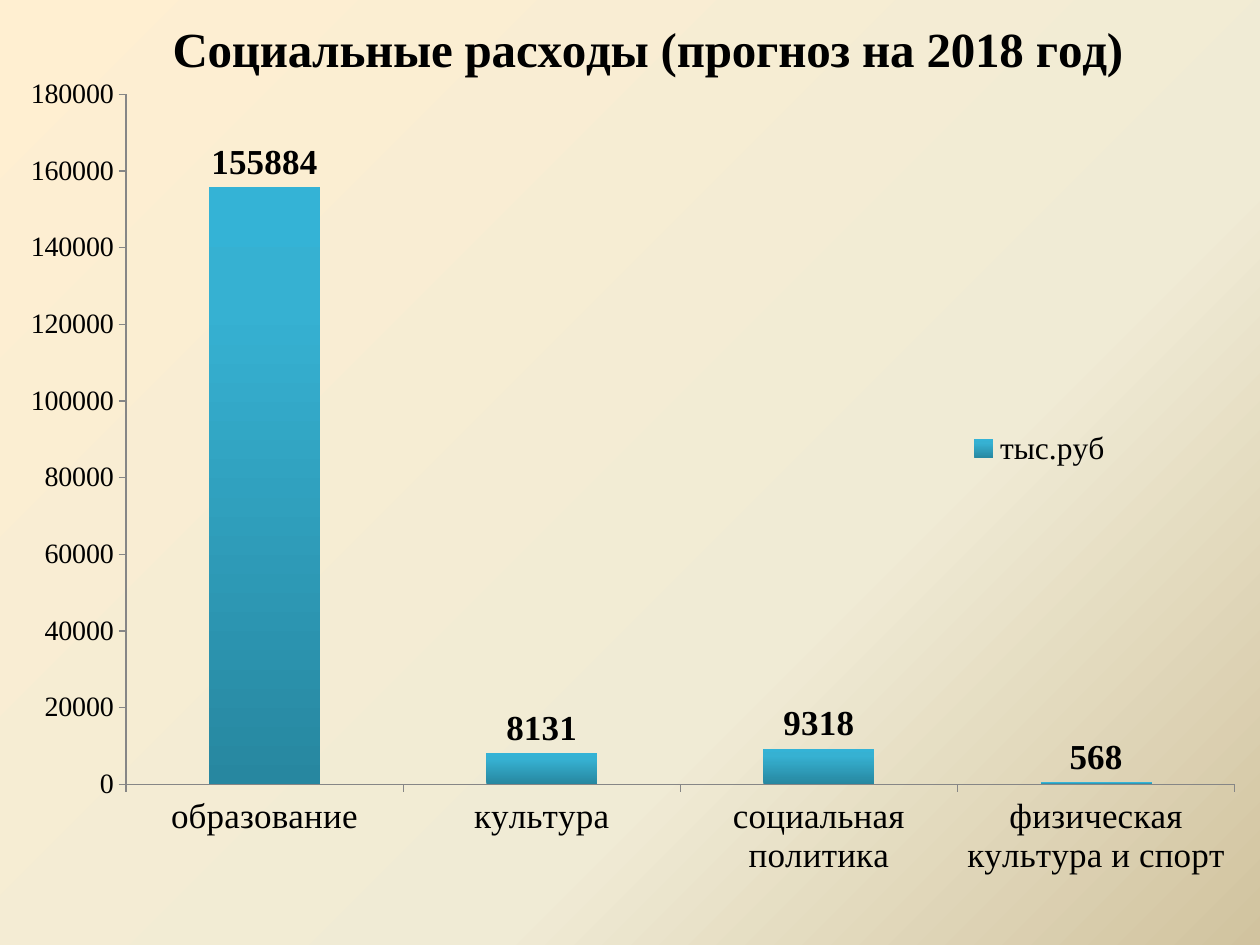
from dataclasses import dataclass

from lxml import etree
from pptx import Presentation
from pptx.chart.data import CategoryChartData
from pptx.dml.color import RGBColor
from pptx.enum.chart import (XL_CHART_TYPE, XL_LABEL_POSITION,
                             XL_LEGEND_POSITION, XL_TICK_MARK)
from pptx.oxml.ns import qn
from pptx.util import Pt

COLUMNS = XL_CHART_TYPE.COLUMN_CLUSTERED
LABEL_ABOVE = XL_LABEL_POSITION.OUTSIDE_END
LEGEND_RIGHT = XL_LEGEND_POSITION.RIGHT
TICK_OUTSIDE = XL_TICK_MARK.OUTSIDE

PAGE_WIDTH, PAGE_HEIGHT = Pt(720), Pt(540)
BLANK_LAYOUT = 6

TITLE = "Социальные расходы (прогноз на 2018 год)"
SERIES_NAME = "тыс.руб"
EXPENSES = {
    "образование": 155884,
    "культура": 8131,
    "социальная политика": 9318,
    "физическая культура и спорт": 568,
}


@dataclass(frozen=True)
class Theme:
    font: str = "Times New Roman"
    text: str = "000000"
    axis: str = "868686"
    # Gradient stops: position in percent, colour
    background: tuple = ((0, "FFEFD1"), (65, "F0EBD5"), (100, "D1C39F"))
    column: tuple = ((0, "2787A0"), (80, "36B1D2"), (100, "34B3D6"))
    title_size: int = 28
    label_size: int = 20
    legend_size: int = 18
    value_size: int = 16


THEME = Theme()


def style_font(font, size, bold=False):
    font.name = THEME.font
    font.size = Pt(size)
    font.bold = bold
    font.color.rgb = RGBColor.from_string(THEME.text)


def set_gradient(fill, owner, stops, angle):
    """Fill with any number of stops; the angle runs counter-clockwise."""
    fill.gradient()
    fill.gradient_angle = angle
    stop_list = next(owner.iter(qn("a:gsLst")))
    for stop in list(stop_list):
        stop_list.remove(stop)
    for position, color in stops:
        stop = etree.SubElement(stop_list, qn("a:gs"), pos=str(position * 1000))
        etree.SubElement(stop, qn("a:srgbClr"), val=color)


def place_part(part, index, **lengths):
    """Give a chart part a manual layout in fractions of the chart."""
    for old in part.findall(qn("c:layout")):
        part.remove(old)
    layout = etree.Element(qn("c:layout"))
    manual = etree.SubElement(layout, qn("c:manualLayout"))
    if part.tag == qn("c:plotArea"):
        etree.SubElement(manual, qn("c:layoutTarget"), val="inner")
    for mode in ("xMode", "yMode"):
        etree.SubElement(manual, qn(f"c:{mode}"), val="edge")
    for name, value in lengths.items():
        etree.SubElement(manual, qn(f"c:{name}"), val=str(value))
    part.insert(index, layout)


def style_axis(axis, size):
    axis.has_major_gridlines = False
    axis.major_tick_mark = TICK_OUTSIDE
    axis.format.line.color.rgb = RGBColor.from_string(THEME.axis)
    axis.format.line.width = Pt(0.75)
    style_font(axis.tick_labels.font, size)


def add_expense_chart(page):
    data = CategoryChartData(number_format="General")
    data.categories = list(EXPENSES)
    data.add_series(SERIES_NAME, list(EXPENSES.values()))
    chart = page.shapes.add_chart(
        COLUMNS, 0, 0, PAGE_WIDTH, PAGE_HEIGHT, data).chart
    chart.font.name = "Calibri"
    chart.font.size = Pt(10)
    return chart


def style_columns(plot):
    plot.gap_width = 150
    plot.vary_by_categories = False
    series = plot.series[0]
    set_gradient(series.format.fill, series.format.element
                 if hasattr(series.format, "element") else series._element,
                 THEME.column, 90)
    labels = series.data_labels
    labels.show_value = True
    labels.position = LABEL_ABOVE
    style_font(labels.font, THEME.label_size, bold=True)


def style_title(chart):
    chart.has_title = True
    frame = chart.chart_title.text_frame
    frame.text = TITLE
    style_font(frame.paragraphs[0].runs[0].font, THEME.title_size, bold=True)
    chart.chart_title.include_in_layout = False
    place_part(chart.chart_title._element, 1, x=0.13, y=0.01)


def style_legend(chart):
    chart.has_legend = True
    legend = chart.legend
    legend.position = LEGEND_RIGHT
    legend.include_in_layout = False
    style_font(legend.font, THEME.legend_size)
    place_part(legend._element, 1, x=0.76, y=0.44, w=0.13, h=0.07)


def main():
    deck = Presentation()
    deck.slide_width, deck.slide_height = PAGE_WIDTH, PAGE_HEIGHT
    page = deck.slides.add_slide(deck.slide_layouts[BLANK_LAYOUT])

    # Background, from the top left to the bottom right
    set_gradient(page.background.fill, page.element, THEME.background, 315)

    # Chart with its own title and legend
    chart = add_expense_chart(page)
    style_title(chart)
    style_legend(chart)
    style_columns(chart.plots[0])

    # Axes and plot area
    style_axis(chart.category_axis, THEME.label_size)
    style_axis(chart.value_axis, THEME.value_size)
    chart.value_axis.maximum_scale = 180000
    chart.value_axis.minimum_scale = 0
    chart.value_axis.major_unit = 20000
    plot_area = next(chart.element.iter(qn("c:plotArea"))) if hasattr(
        chart, "element") else next(chart._chartSpace.iter(qn("c:plotArea")))
    place_part(plot_area, 0, x=0.1, y=0.1, w=0.88, h=0.73)

    deck.save("out.pptx")


if __name__ == "__main__":
    main()
